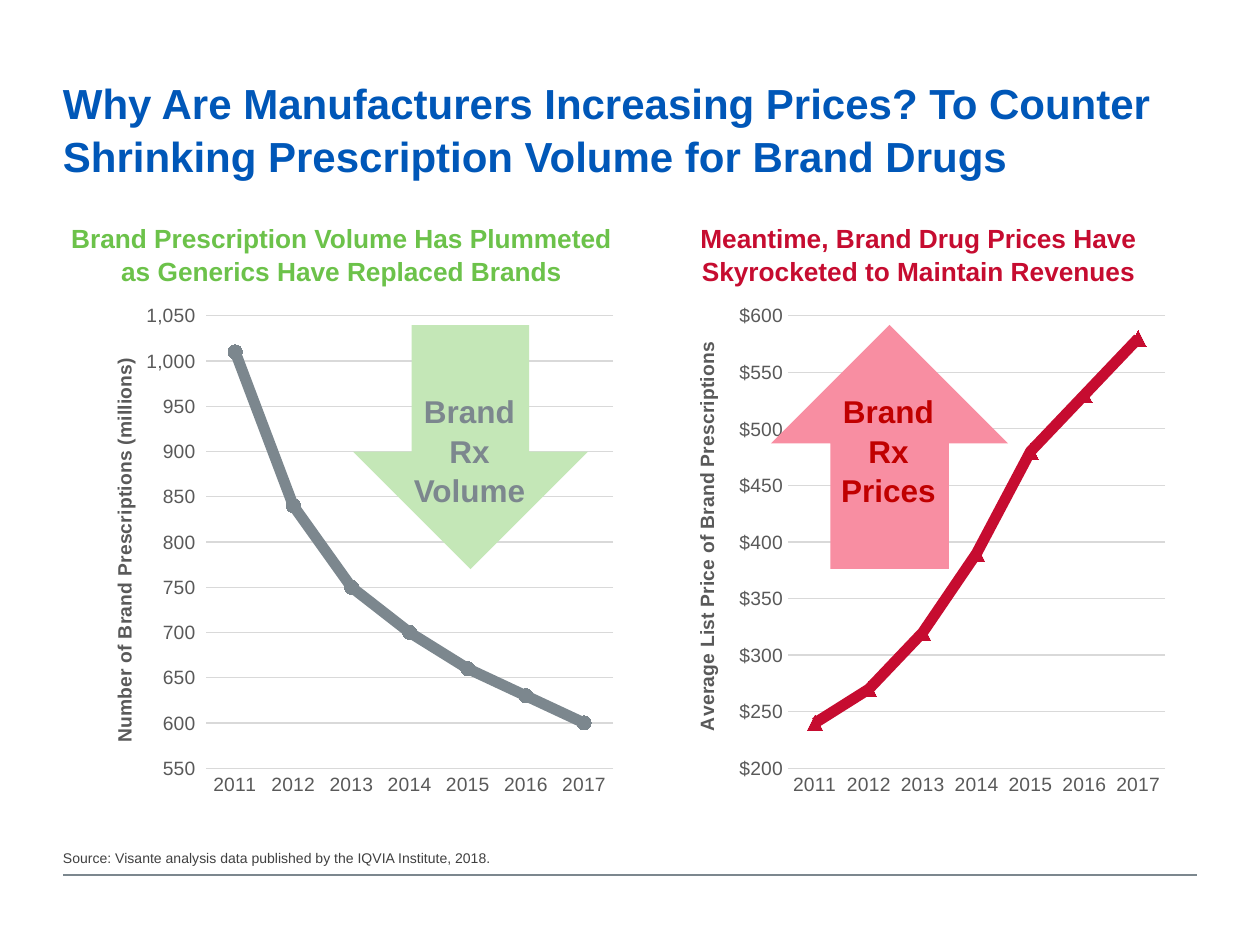
import pptx
import pptx.util
import pptx.chart.data
import pptx.dml.color
import pptx.enum.chart
import pptx.enum.shapes
import pptx.enum.text
import pptx.oxml
import pptx.oxml.ns

PX = 914400 / 126
FONT, GREY, GRID, AXIS = "Arial", "7C878E", "D9D9D9", "595959"
GREEN, RED = "6CC24A", "C60C30"
TITLE = ("Why Are Manufacturers Increasing Prices? "
         "To Counter Shrinking Prescription Volume for Brand Drugs")
SOURCE = "Source: Visante analysis data published by the IQVIA Institute, 2018."
YEARS = [str(year) for year in range(2011, 2018)]
CHART_TOP, CHART_W, CHART_H = 300, 557, 544
MARKER = pptx.enum.chart.XL_MARKER_STYLE

# plot: x, y, w, h and title_at: x, y are fractions of the chart
PANELS = [
    dict(left=63, heading="Brand Prescription Volume Has Plummeted as Generics Have Replaced Brands",
         heading_color=GREEN, axis="Number of Brand Prescriptions (millions)",
         title_at=(0.08, 0.1), values=[1010, 840, 750, 700, 660, 630, 600],
         scale=(550, 1050, 50), plot=(0.257, 0.029, 0.731, 0.832),
         format='_(* #,##0_);_(* \\(#,##0\\);_(* "-"??_);_(', color=GREY,
         marker=(MARKER.CIRCLE, 8), arrow=(353, 325, 235, 244), arrow_fill="C4E7B7",
         rotation=0, label=["Brand", "Rx Volume"], label_box=(401, 384, 137, 158),
         label_color=GREY),
    dict(left=640, heading="Meantime, Brand Drug Prices Have Skyrocketed to Maintain Revenues",
         heading_color=RED, axis="Average List Price of Brand Prescriptions",
         title_at=(0.09, 0.07), values=[240, 270, 320, 390, 480, 530, 580],
         scale=(200, 600, 50), plot=(0.266, 0.029, 0.677, 0.832),
         format='"$"#,##0', color=RED,
         marker=(MARKER.TRIANGLE, 9), arrow=(771, 325, 237, 244), arrow_fill="F88EA2",
         rotation=180, label=["Brand", "Rx", "Prices"], label_box=(820, 384, 137, 125),
         label_color="C00000"),
]


def emu(*lengths):
    return [round(n * PX) for n in lengths]


def rgb(color):
    return pptx.dml.color.RGBColor.from_string(color)


def style_font(font, size, color, bold=False):
    for name, value in dict(name=FONT, size=pptx.util.Pt(size), bold=bold).items():
        setattr(font, name, value)
    font.color.rgb = rgb(color)


def style_line(line, color, width):
    line.color.rgb = rgb(color)
    line.width = pptx.util.Pt(width)


def add_text(s, box, lines, size, color, bold=True, center=True, inset=0,
             bottom=0, anchor="TOP", spacing=1.05):
    tf = s.shapes.add_textbox(*emu(*box)).text_frame
    margins = emu(0, inset, 0, bottom)
    settings = dict(zip(("margin_left", "margin_top", "margin_right", "margin_bottom"), margins),
                    word_wrap=True,
                    vertical_anchor=getattr(pptx.enum.text.MSO_ANCHOR, anchor))
    for name, value in settings.items():
        setattr(tf, name, value)
    for i, line in enumerate(lines):
        p = tf.paragraphs[0] if i == 0 else tf.add_paragraph()
        p.line_spacing = spacing
        p.alignment = getattr(pptx.enum.text.PP_ALIGN, "CENTER" if center else "LEFT")
        r = p.add_run()
        r.text = line
        style_font(r.font, size, color, bold)


def manual_layout(fractions, inner=False):
    """Return a c:layout element placed by fractions of the chart."""
    target = '<c:layoutTarget val="inner"/>' if inner else ""
    modes = '<c:xMode val="edge"/><c:yMode val="edge"/>'
    places = "".join(f'<c:{key} val="{n}"/>' for key, n in zip("xywh", fractions))
    return pptx.oxml.parse_xml(
        f'<c:layout {pptx.oxml.ns.nsdecls("c")}><c:manualLayout>'
        f'{target}{modes}{places}</c:manualLayout></c:layout>')


def set_layout(parent, layout, index):
    for old in parent.findall(pptx.oxml.ns.qn("c:layout")):
        parent.remove(old)
    parent.insert(index, layout)


def add_line_chart(s, panel):
    data = pptx.chart.data.CategoryChartData(number_format=panel["format"])
    data.categories = YEARS
    data.add_series("Series 1", panel["values"])
    chart = s.shapes.add_chart(
        pptx.enum.chart.XL_CHART_TYPE.LINE_MARKERS,
        *emu(panel["left"], CHART_TOP, CHART_W, CHART_H), data).chart
    chart.has_legend = chart.has_title = False
    style_font(chart.font, 10, "000000")
    set_layout(chart.plots[0]._element.getparent(), manual_layout(panel["plot"], True), 0)

    cat, val = chart.category_axis, chart.value_axis
    for axis in (cat, val):
        axis.major_tick_mark = axis.minor_tick_mark = pptx.enum.chart.XL_TICK_MARK.NONE
        style_font(axis.tick_labels.font, 11, AXIS)
    style_line(cat.format.line, GRID, 0.75)
    val.format.line.fill.background()
    style_line(val.major_gridlines.format.line, GRID, 0.75)
    val.minimum_scale, val.maximum_scale, val.major_unit = panel["scale"]
    val.tick_labels.number_format = panel["format"]
    val.tick_labels.number_format_is_linked = False

    title = val.axis_title
    tf = title.text_frame
    r = tf.paragraphs[0].add_run()
    r.text = panel["axis"]
    style_font(r.font, 11, AXIS, True)
    body = tf._txBody.bodyPr
    body.set("rot", "-5400000")
    body.set("vert", "horz")
    set_layout(title._element, manual_layout(panel["title_at"]), 1)

    series = chart.plots[0].series[0]
    series.smooth = False
    style_line(series.format.line, panel["color"], 6.25)
    marker = series.marker
    marker.style, marker.size = panel["marker"]
    marker.format.fill.solid()
    marker.format.fill.fore_color.rgb = rgb(panel["color"])
    style_line(marker.format.line, panel["color"], 0.75)


def add_arrow(s, panel):
    sp = s.shapes.add_shape(pptx.enum.shapes.MSO_SHAPE.DOWN_ARROW, *emu(*panel["arrow"]))
    sp.shadow.inherit = False
    sp.rotation = panel["rotation"]
    sp.fill.solid()
    sp.fill.fore_color.rgb = rgb(panel["arrow_fill"])
    sp.line.fill.background()


def add_rule(s):
    rule = s.shapes.add_connector(pptx.enum.shapes.MSO_CONNECTOR.STRAIGHT,
                                  *emu(63, 875, 1197, 875))
    style_line(rule.line, GREY, 1)
    rule._element.spPr.append(
        pptx.oxml.parse_xml(f'<a:effectLst {pptx.oxml.ns.nsdecls("a")}/>'))


def main():
    prs = pptx.Presentation()
    prs.slide_width, prs.slide_height = emu(1260, 945)
    s = prs.slides.add_slide(prs.slide_layouts[6])
    add_rule(s)
    add_text(s, (63, 72, 1134, 123), [TITLE], 24, "0057B8", center=False, inset=3)
    add_text(s, (63, 844, 1162, 30), [SOURCE], 8, "404040", bold=False,
             center=False, inset=6, bottom=6, spacing=1.0)
    for panel in PANELS:
        add_line_chart(s, panel)
        add_text(s, (panel["left"], 199, CHART_W, 88), [panel["heading"]], 15,
                 panel["heading_color"], anchor="BOTTOM")
        add_arrow(s, panel)
        add_text(s, panel["label_box"], panel["label"], 18, panel["label_color"],
                 inset=6, bottom=6)
    prs.save("out.pptx")


if __name__ == "__main__":
    main()
